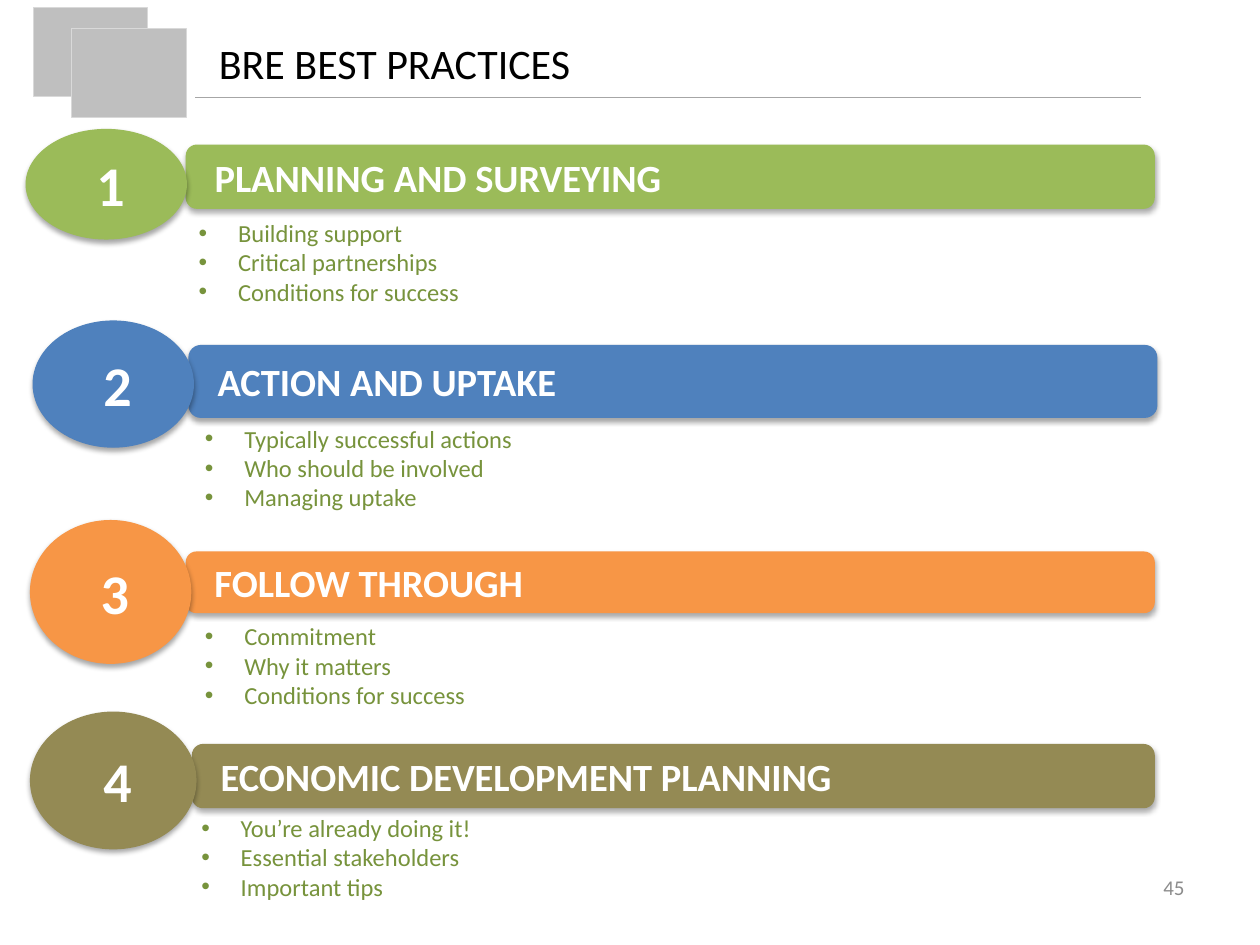
from lxml.etree import SubElement
from pptx import Presentation
from pptx.dml.color import RGBColor
from pptx.enum.shapes import MSO_CONNECTOR as Connector, MSO_SHAPE as Shape
from pptx.enum.text import MSO_ANCHOR as Anchor, PP_ALIGN as Align
from pptx.oxml.ns import qn
from pptx.util import Pt

FONT = "Calibri"
TITLE = "BRE BEST PRACTICES"
PAGE_NUMBER = "45"
# Each box is left, top, width, height in points
SECTIONS = [
    dict(heading="PLANNING AND SURVEYING", color="9BBB59",
         oval=(15, 74, 91.5, 62.5), bar=(106.5, 83, 553, 36), bullets_at=(106.5, 121),
         bullets=["Building support", "Critical partnerships", "Conditions for success"]),
    dict(heading="ACTION AND UPTAKE", color="4F81BD",
         oval=(19, 183.5, 91.5, 72), bar=(108, 197.5, 553, 41), bullets_at=(110, 238.5),
         bullets=["Typically successful actions", "Who should be involved", "Managing uptake"]),
    dict(heading="FOLLOW THROUGH", color="F79646",
         oval=(17.5, 297.5, 91.5, 81.5), bar=(106.5, 315.5, 553, 34.5), bullets_at=(110, 351.5),
         bullets=["Commitment", "Why it matters", "Conditions for success"]),
    dict(heading="ECONOMIC DEVELOPMENT PLANNING", color="948A54",
         oval=(17.5, 407, 94.5, 78), bar=(110, 425.5, 549.5, 36), bullets_at=(108, 461),
         bullets=["You’re already doing it!", "Essential stakeholders", "Important tips"]),
]
BULLETS_SIZE = (376, 58.5)
BULLET_INDENT = 22.5
CORNER_SQUARES = [(19, 4.5), (41, 16.5)]
SQUARE_SIZE = (65.5, 50.5)


def rgb(color):
    return RGBColor.from_string(color)


def add_shadow(effects, opacity):
    shadow = SubElement(effects, qn("a:outerShdw"), blurRad=str(Pt(3.1)), dist=str(Pt(1.8)),
                        dir="5400000", rotWithShape="0")
    color = SubElement(shadow, qn("a:srgbClr"), val="000000")
    SubElement(color, qn("a:alpha"), val=str(opacity * 1000))


def add_box(slide, kind, box, fill, line, shadow=False):
    shape = slide.shapes.add_shape(kind, *map(Pt, box))
    shape.fill.solid()
    shape.fill.fore_color.rgb = rgb(fill)
    shape.line.color.rgb = rgb(line)
    shape.line.width = Pt(0.75)
    shape.shadow.inherit = False
    if shadow:
        add_shadow(shape._element.spPr.find(qn("a:effectLst")), 35)
    return shape


def write(shape, lines, size, color, bold=False, align=Align.LEFT, anchor=Anchor.MIDDLE):
    frame = shape.text_frame
    frame.word_wrap = True
    frame.vertical_anchor = anchor
    frame.text = "\n".join(lines)
    for paragraph in frame.paragraphs:
        paragraph.alignment = align
        font = paragraph.font
        font.name, font.size, font.bold = FONT, Pt(size), bold
        font.color.rgb = rgb(color)
    return frame


def add_text(slide, box, lines, size, color, **options):
    return write(slide.shapes.add_textbox(*map(Pt, box)), lines, size, color, **options)


def add_bullets(frame):
    for paragraph in frame.paragraphs:
        properties = paragraph._p.get_or_add_pPr()
        properties.set("marL", str(Pt(BULLET_INDENT)))
        properties.set("indent", str(-Pt(BULLET_INDENT)))
        # The bullet must come before the default run properties
        properties.insert(0, properties.makeelement(qn("a:buFont"), {"typeface": "Arial"}))
        properties.insert(1, properties.makeelement(qn("a:buChar"), {"char": "•"}))


def main():
    presentation = Presentation()
    presentation.slide_width, presentation.slide_height = Pt(720), Pt(540)
    slide = presentation.slides.add_slide(presentation.slide_layouts[6])

    # Numbered sections
    for number, section in enumerate(SECTIONS, 1):
        color = section["color"]
        bar = add_box(slide, Shape.ROUNDED_RECTANGLE, section["bar"], color, color, shadow=True)
        write(bar, [section["heading"]], 22, "FFFFFF", bold=True).margin_left = Pt(14.4)
        oval = add_box(slide, Shape.OVAL, section["oval"], color, color, shadow=True)
        write(oval, [str(number)], 32, "FFFFFF", bold=True,
              align=Align.CENTER).margin_left = Pt(12)
        add_bullets(add_text(slide, section["bullets_at"] + BULLETS_SIZE, section["bullets"],
                             14, "77933C", anchor=Anchor.TOP))

    # Title and page number
    add_text(slide, (118, 4.5, 584, 62.5), [TITLE], 24, "000000")
    add_text(slide, (516, 492.5, 168, 29), [PAGE_NUMBER], 12, "8C8C8C", align=Align.RIGHT)

    # Corner squares and title rule
    for corner in CORNER_SQUARES:
        add_box(slide, Shape.RECTANGLE, corner + SQUARE_SIZE, "BFBFBF", "D9D9D9")
    rule = slide.shapes.add_connector(Connector.STRAIGHT, Pt(111.5), Pt(55.5), Pt(652), Pt(55.5))
    rule.line.color.rgb = rgb("A6A6A6")
    rule.line.width = Pt(0.25)
    SubElement(rule._element.spPr, qn("a:effectLst"))

    presentation.save("out.pptx")


if __name__ == "__main__":
    main()
